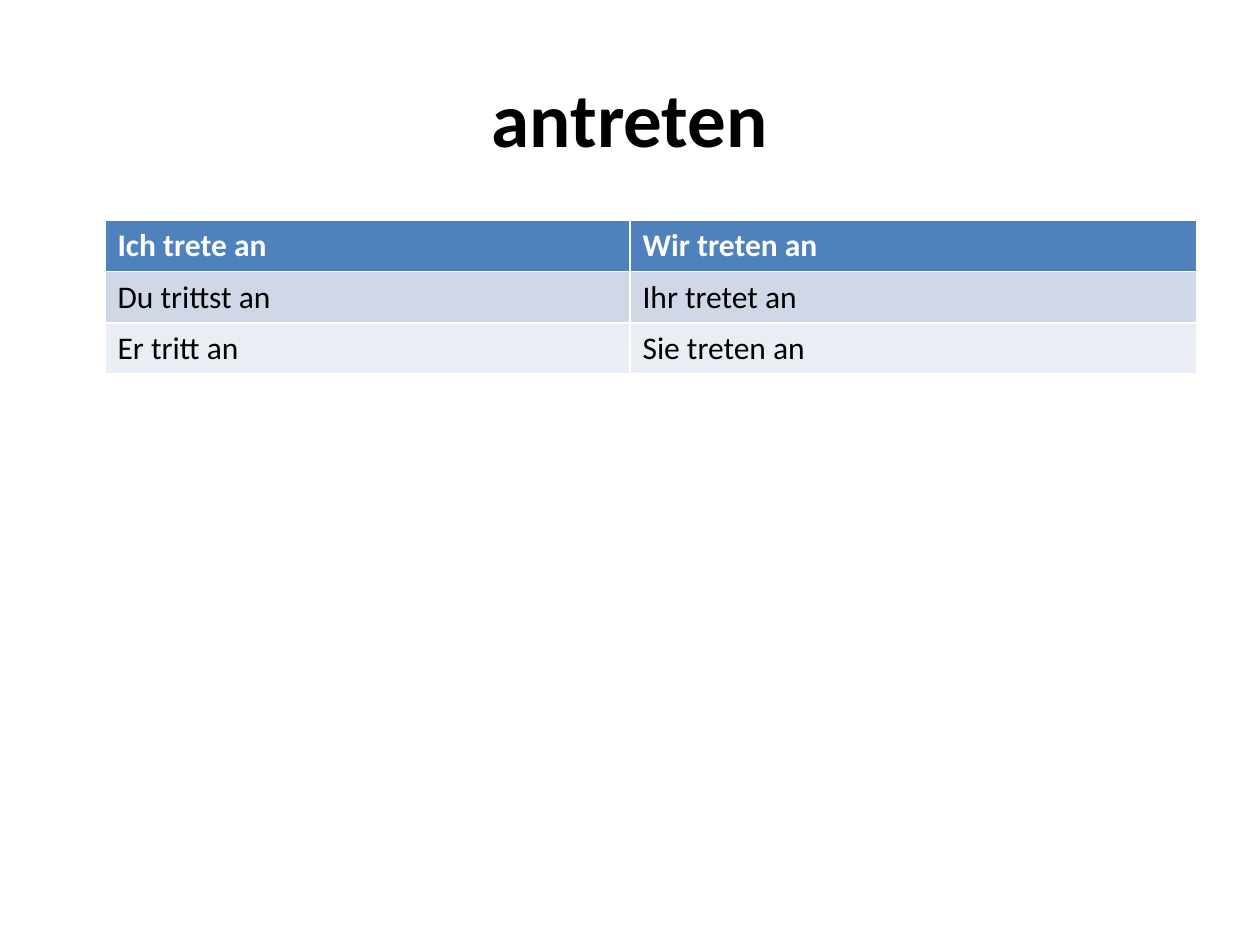
from dataclasses import dataclass

from pptx import Presentation
from pptx.dml.color import RGBColor
from pptx.enum.text import MSO_ANCHOR, PP_ALIGN
from pptx.util import Inches, Pt

MIDDLE, BOTTOM = MSO_ANCHOR.MIDDLE, MSO_ANCHOR.BOTTOM
LEFT, CENTER = PP_ALIGN.LEFT, PP_ALIGN.CENTER
COLS, ROWS = 120, 90


@dataclass(frozen=True)
class Theme:
    """Colours, font and type sizes."""
    font: str = "Calibri"
    ink: str = "000000"
    light: str = "FFFFFF"
    head: str = "4F81BD"
    bands: tuple = ("D0D8E8", "E9EDF4")
    title: int = 44
    body: int = 18


class Deck:
    """Holds the theme and the current slide, measured on a grid."""

    def __init__(self, theme):
        """Start a presentation with one titled slide."""
        self.theme = theme
        self.show = Presentation()
        self.show.slide_width, self.show.slide_height = Inches(10), Inches(7.5)
        self.slide = self.show.slides.add_slide(self.show.slide_layouts[5])

    def across(self, cols):
        """Turn grid columns into a length."""
        return round(self.show.slide_width * cols / COLS)

    def down(self, rows):
        """Turn grid rows into a length."""
        return round(self.show.slide_height * rows / ROWS)

    def label(self, frame, text, size, color, bold, align):
        """Set the text of a frame and its style."""
        frame.text = text
        par = frame.paragraphs[0]
        par.alignment = align
        font = par.font
        font.name, font.size, font.bold = self.theme.font, Pt(size), bold
        font.color.rgb = RGBColor.from_string(color)

    def title(self, text, x, y, w, h):
        """Move and fill the title placeholder."""
        box = self.slide.shapes.title
        box.left, box.top = self.across(x), self.down(y)
        box.width, box.height = self.across(w), self.down(h)
        box.text_frame.vertical_anchor = MIDDLE
        self.label(box.text_frame, text, self.theme.title, self.theme.ink,
                   True, CENTER)

    def table(self, data, x, y, widths, height):
        """Add a table with a header row and banded rows."""
        theme = self.theme
        grid = self.slide.shapes.add_table(
            len(data), len(widths), self.across(x), self.down(y),
            self.across(sum(widths)), self.down(height * len(data))).table
        for col, width in zip(grid.columns, widths):
            col.width = self.across(width)
        for i, texts in enumerate(data):
            head = i == 0
            fill = theme.head if head else theme.bands[(i - 1) % 2]
            color = theme.light if head else theme.ink
            for cell, text in zip(grid.rows[i].cells, texts):
                cell.fill.solid()
                cell.fill.fore_color.rgb = RGBColor.from_string(fill)
                cell.vertical_anchor = BOTTOM
                self.label(cell.text_frame, text, theme.body, color, head, LEFT)


def main():
    """Build and save the verb slide."""
    deck = Deck(Theme())
    deck.title("antreten", 6, 3.6, 108, 15)
    forms = [
        ("Ich trete an", "Wir treten an"),
        ("Du trittst an", "Ihr tretet an"),
        ("Er tritt an", "Sie treten an"),
    ]
    deck.table(forms, 10, 21, (50, 54), 4.88)
    deck.show.save("out.pptx")


if __name__ == "__main__":
    main()
